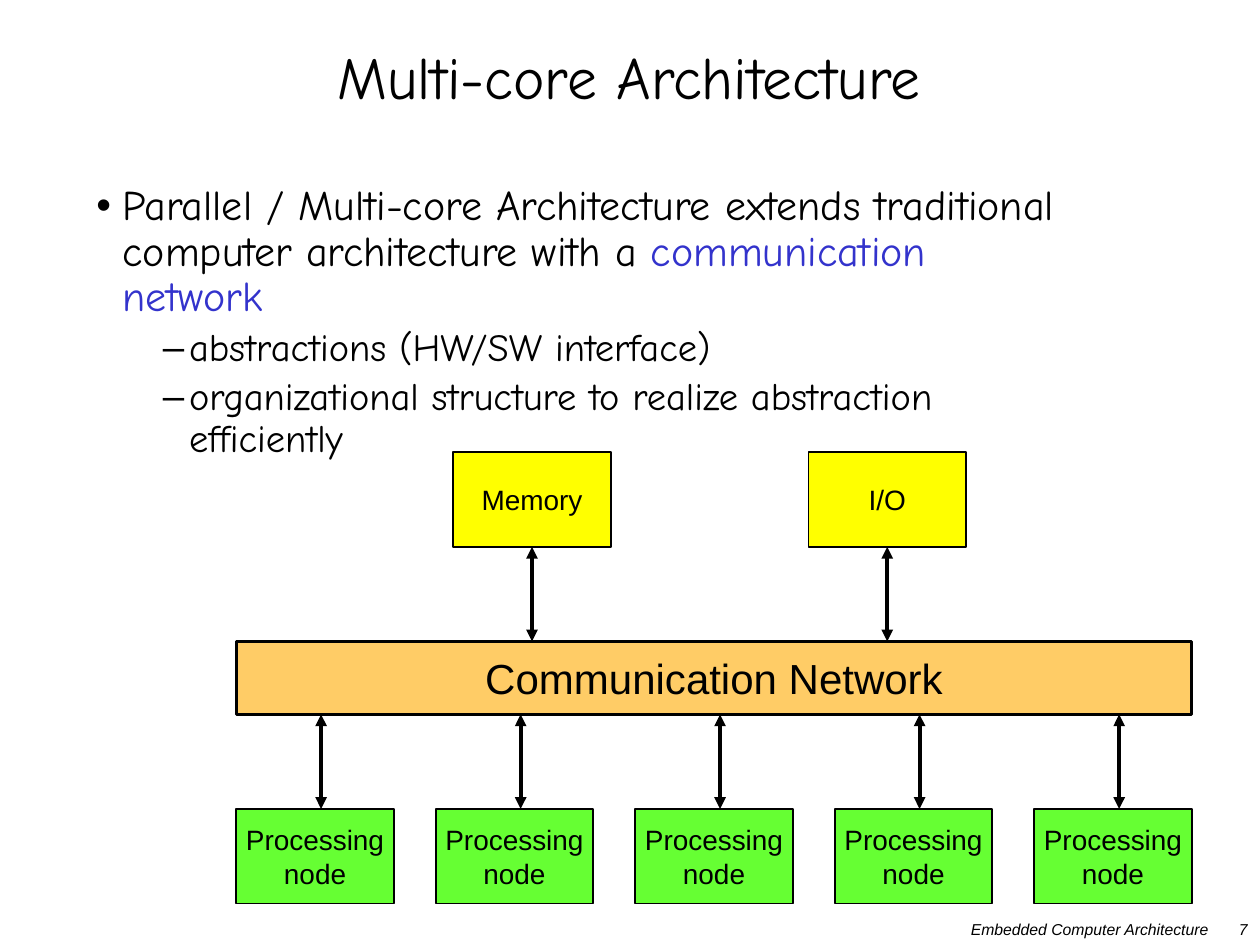
from pptx import Presentation
from pptx.dml.color import RGBColor as Rgb
from pptx.enum.shapes import MSO_CONNECTOR as Conn, MSO_SHAPE as Kind
from pptx.enum.text import MSO_ANCHOR as Anchor, PP_ALIGN as Align
from pptx.oxml.ns import qn
from pptx.util import Pt
from lxml.etree import SubElement as Sub

BLACK = Rgb(0, 0, 0)
BLUE = Rgb(0x33, 0x33, 0xCC)
ORANGE = Rgb(0xFF, 0xCC, 0x66)
GREEN = Rgb(0x66, 0xFF, 0x33)
YELLOW = Rgb(0xFF, 0xFF, 0)


class Board:
    head = "Comic Neue"
    body = "Arial"

    def __init__(self, slide):
        self.shapes = slide.shapes

    def style(self, para, font, size, align=Align.LEFT):
        para.alignment = align
        for run in para.runs:
            run.font.name = font
            run.font.size = Pt(size)
            run.font.color.rgb = BLACK

    def text(self, x, y, w, h):
        frame = self.shapes.add_textbox(Pt(x), Pt(y), Pt(w), Pt(h)).text_frame
        frame.word_wrap = True
        return frame

    def title(self, text, x, y, w, h):
        frame = self.text(x, y, w, h)
        frame.vertical_anchor = Anchor.MIDDLE
        frame.text = text
        para = frame.paragraphs[0]
        para.line_spacing = 0.8
        self.style(para, self.head, 34, Align.CENTER)

    def footer(self, text, x, w):
        frame = self.text(x, 522, w, 18)
        frame.text = text
        para = frame.paragraphs[0]
        self.style(para, self.body, 9, Align.RIGHT)
        para.runs[0].font.italic = True

    def bullet(self, para, text, level, size, mark, left):
        para.text = text
        para.level = level
        para.line_spacing = 0.9
        para.space_before = Pt(size * 0.2)
        self.style(para, self.head, size)
        props = para._p.get_or_add_pPr()
        props.set("marL", str(Pt(left)))
        props.set("indent", str(-Pt(15)))
        Sub(props, qn("a:buFont"), typeface=self.body)
        Sub(props, qn("a:buChar"), char=mark)

    def box(self, text, x, y, w, h, fill, size=16, line=1):
        rect = self.shapes.add_shape(Kind.RECTANGLE, Pt(x), Pt(y), Pt(w), Pt(h))
        rect.shadow.inherit = False
        rect.fill.solid()
        rect.fill.fore_color.rgb = fill
        rect.line.color.rgb = BLACK
        rect.line.width = Pt(line)
        frame = rect.text_frame
        frame.word_wrap = False
        frame.vertical_anchor = Anchor.MIDDLE
        frame.text = text
        for para in frame.paragraphs:
            self.style(para, self.body, size, Align.CENTER)
        return rect

    def arrow(self, x, top, end):
        link = self.shapes.add_connector(
            Conn.STRAIGHT, Pt(x), Pt(top), Pt(x), Pt(end))
        link.line.color.rgb = BLACK
        link.line.width = Pt(2.25)
        line = link.line._get_or_add_ln()
        for tag in ("a:headEnd", "a:tailEnd"):
            Sub(line, qn(tag), type="triangle")
        Sub(link._element.spPr, qn("a:effectLst"))
        return link


def main():
    deck = Presentation()
    deck.slide_width, deck.slide_height = Pt(720), Pt(540)
    board = Board(deck.slides.add_slide(deck.slide_layouts[6]))

    board.footer("Embedded Computer Architecture", 513, 184.5)
    board.footer("7", 690, 30)
    board.title("Multi-core Architecture", 23, 18, 673, 57.6)

    frame = board.text(48, 102, 564, 220)
    first = frame.paragraphs[0]
    board.bullet(first, "Parallel / Multi-core Architecture extends traditional "
                 "computer architecture with a ", 0, 24, "•", 15)
    run = first.add_run()
    run.text = "communication network"
    board.style(first, board.head, 24)
    run.font.color.rgb = BLUE
    for item in ("abstractions (HW/SW interface)",
                 "organizational structure to realize abstraction efficiently"):
        board.bullet(frame.add_paragraph(), item, 1, 22, "–", 53)

    left, wide, tall = 135, 90, 54
    top, base, row = 366.5, 408.3, 462.3
    board.box("Communication Network", left, top, 546, base - top, ORANGE, 24, 1.5)
    for i in range(5):
        x = left + 114 * i
        board.box("Processing\nnode", x, row, wide, tall, GREEN)
        board.arrow(x + 48.5, base, row)
    for name, x in (("Memory", 259), ("I/O", 462)):
        unit = board.box(name, x, 258.5, wide, tall, YELLOW)
        link = board.arrow(x + wide / 2, 258.5 + tall, top)
        link.begin_connect(unit, 2)

    deck.save("out.pptx")


if __name__ == "__main__":
    main()
